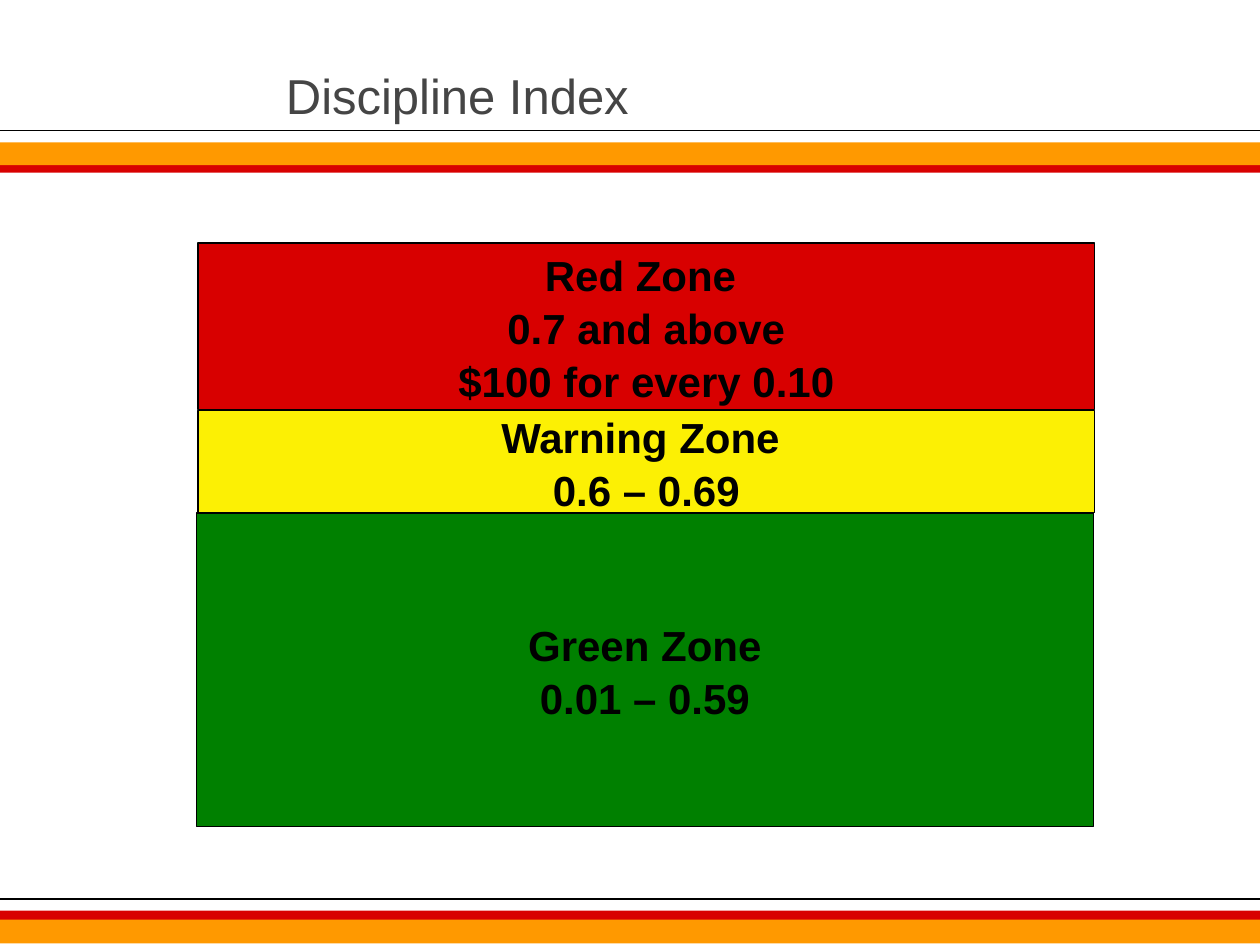
from lxml import etree
from pptx import Presentation
from pptx.dml.color import RGBColor
from pptx.enum import shapes, text
from pptx.oxml.ns import qn
from pptx.util import Cm, Pt

COLOURS = {
    "red": "D80000",
    "orange": "FF9900",
    "yellow": "FCF004",
    "green": "008000",
    "black": "000000",
    "grey": "454545",
}
WIDTH, HEIGHT = 25.4, 19.05


def colour(name):
    return RGBColor.from_string(COLOURS[name])


class ZonePage:
    """Holds the text style and the slide being built; lengths are in cm."""

    font = "Arial"
    line_width = Pt(0.75)

    def __init__(self, page):
        self.page = page

    def style(self, para, size, ink, bold, **formats):
        for name, value in formats.items():
            setattr(para, name, value)
        for name, value in {"name": self.font, "size": Pt(size), "bold": bold}.items():
            setattr(para.font, name, value)
        para.font.color.rgb = colour(ink)

    def title(self, words, left, top, width, height):
        box = self.page.shapes.title
        place = {"left": left, "top": top, "width": width, "height": height}
        for name, value in place.items():
            setattr(box, name, Cm(value))
        frame = box.text_frame
        frame.text = words
        frame.vertical_anchor = text.MSO_ANCHOR.BOTTOM
        self.style(frame.paragraphs[0], 28, "grey", False,
                   alignment=text.PP_ALIGN.LEFT, line_spacing=0.8)

    def rule(self, y):
        line = self.page.shapes.add_connector(
            shapes.MSO_CONNECTOR.STRAIGHT, 0, Cm(y), Cm(WIDTH), Cm(y))
        line.line.color.rgb = colour("black")
        line.line.width = self.line_width
        etree.SubElement(line._element.spPr, qn("a:effectLst"))

    def bar(self, fill, left, top, width, height):
        box = self.page.shapes.add_shape(
            shapes.MSO_SHAPE.RECTANGLE, Cm(left), Cm(top), Cm(width), Cm(height))
        box.shadow.inherit = False
        box.fill.solid()
        box.fill.fore_color.rgb = colour(fill)
        box.line.fill.background()
        return box

    def zone(self, fill, lines, left, top, width, height):
        box = self.bar(fill, left, top, width, height)
        box.line.color.rgb = colour("black")
        box.line.width = self.line_width
        frame = box.text_frame
        frame.word_wrap = False
        frame.vertical_anchor = text.MSO_ANCHOR.MIDDLE
        frame.text = "\n".join(lines)
        for para in frame.paragraphs:
            self.style(para, 24, "black", True,
                       alignment=text.PP_ALIGN.CENTER, line_spacing=1.05)


def main():
    deck = Presentation()
    deck.slide_width, deck.slide_height = Cm(WIDTH), Cm(HEIGHT)
    page = ZonePage(deck.slides.add_slide(deck.slide_layouts[5]))

    for fill, top, height in (
        ("red", 3.25, 0.23),
        ("orange", 2.87, 0.46),
        ("red", 18.36, 0.23),
        ("orange", 18.54, 0.48),
    ):
        page.bar(fill, 0, top, WIDTH, height)
    for y in (2.63, 18.12):
        page.rule(y)

    page.title("Discipline Index", 5.51, 0.61, 19.18, 2.01)

    for fill, lines, left, top, height in (
        ("green", ["Green Zone", "0.01 – 0.59"], 3.96, 10.34, 6.32),
        ("yellow", ["Warning Zone ", "0.6 – 0.69"], 3.99, 8.28, 2.06),
        ("red", ["Red Zone ", "0.7 and above", "$100 for every 0.10"], 3.99, 4.9, 3.35),
    ):
        page.zone(fill, lines, left, top, 18.08, height)

    deck.save("out.pptx")


if __name__ == "__main__":
    main()
